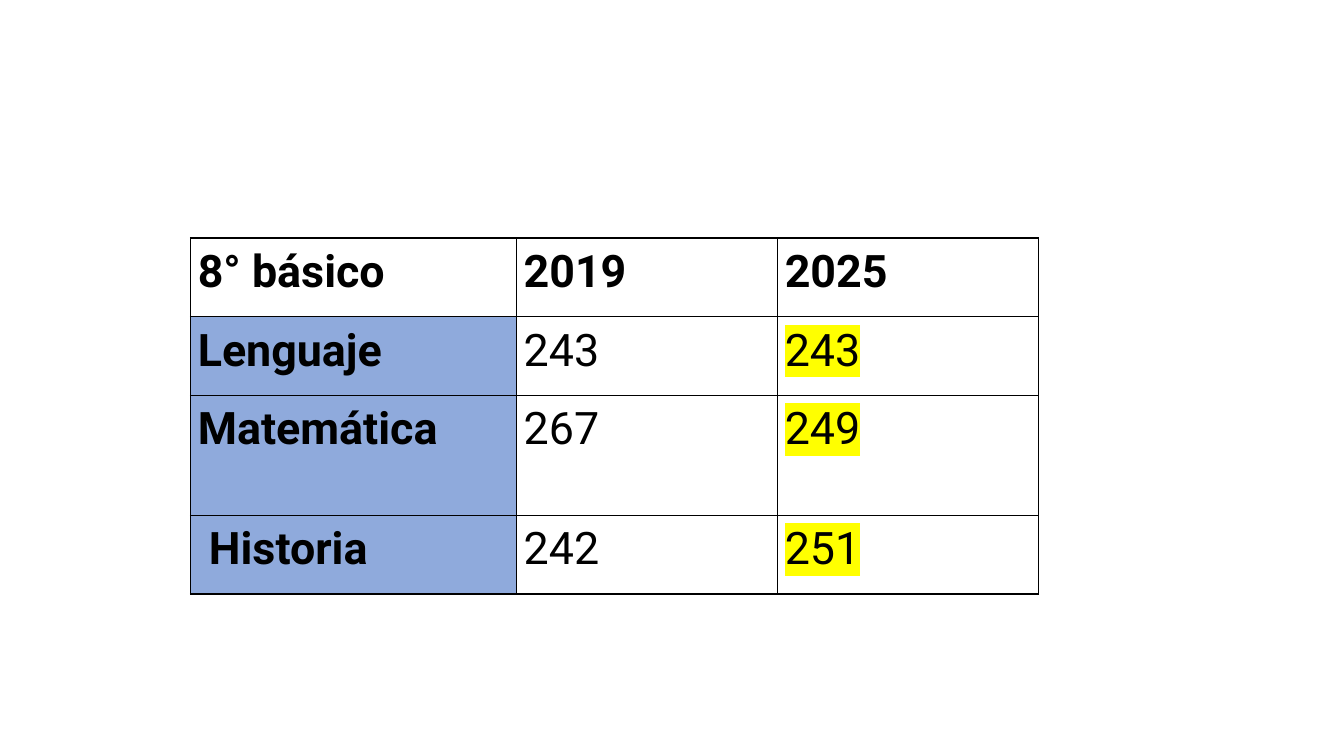
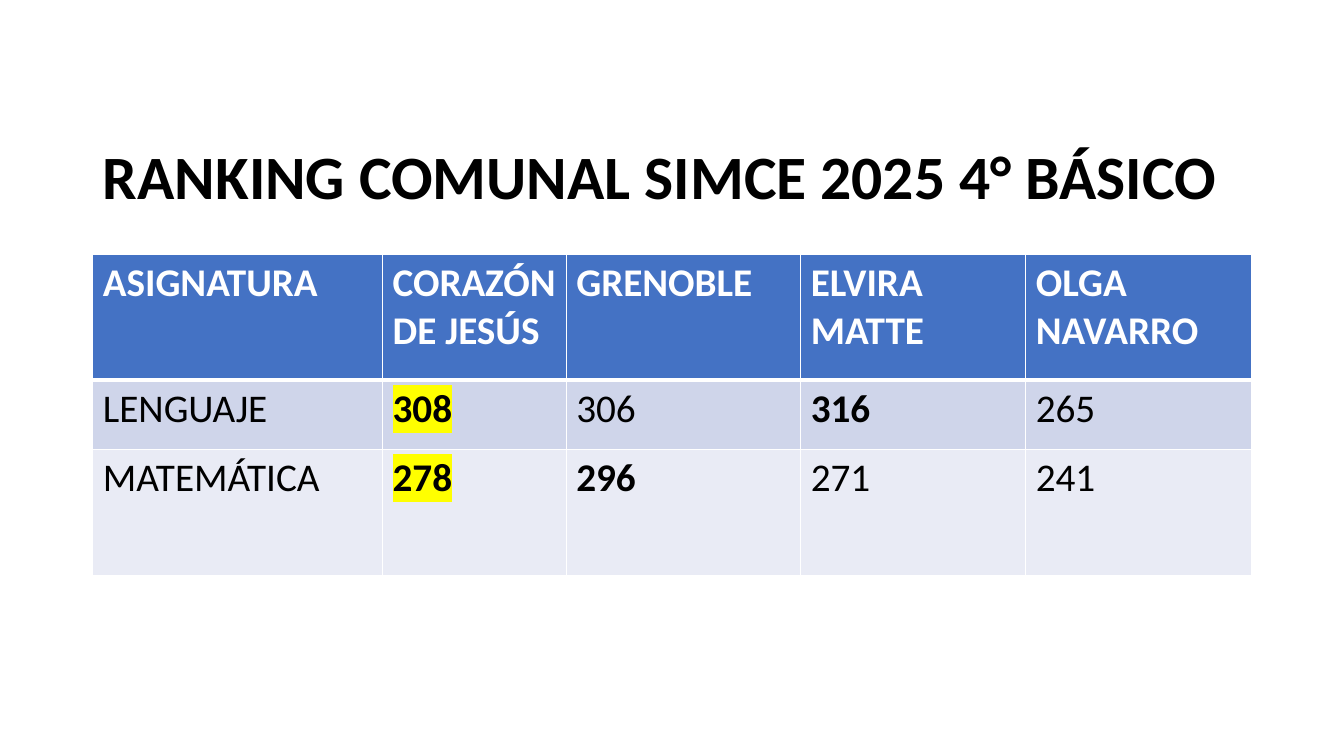
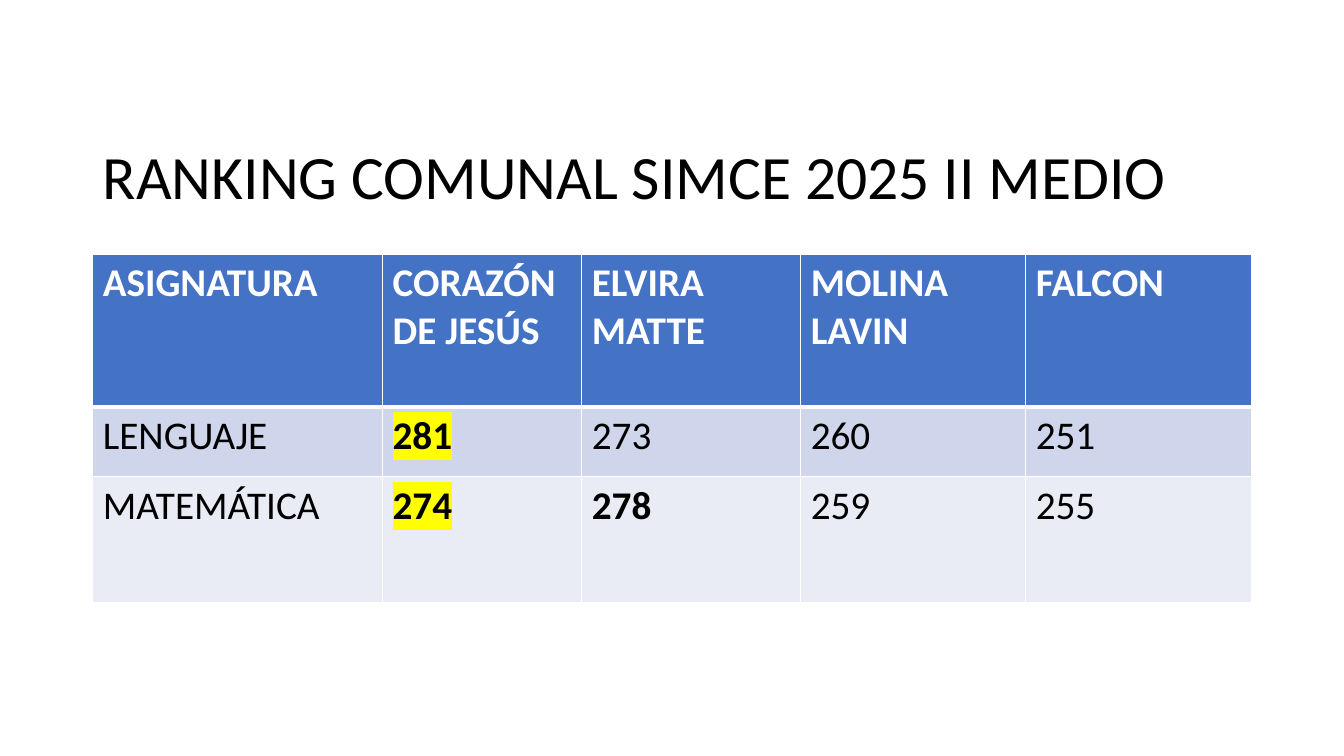
from pptx import Presentation
from pptx.dml.color import RGBColor
from pptx.enum.text import MSO_ANCHOR, MSO_AUTO_SIZE, PP_ALIGN
from pptx.oxml.ns import qn
from pptx.util import Pt
from lxml.etree import SubElement, Element

BLACK, WHITE, YELLOW = "000000", "FFFFFF", "FFFF00"
SUBJECT_BLUE, HEADER_BLUE = "8FAADC", "4472C4"
BANDS = ["CFD5EA", "E9EBF5"]

TITLE_BOX = (66.3, 76.3, 828, 104.4)
RANKING_ORIGIN = (66.3, 181.4)
YEARS_ORIGIN = (136, 170)

TITLE_FONT = {"name": "Calibri", "size": Pt(44)}
RANKING_FONT = {"name": "Calibri", "size": Pt(28)}
YEARS_FONT = {"name": "Roboto", "size": Pt(32)}
YEARS_PARAGRAPH = {"line_spacing": 1.15, "space_after": Pt(8)}
YEARS_MARGINS = {"margin_left": Pt(5.3), "margin_right": Pt(5.3),
                 "margin_top": Pt(0), "margin_bottom": Pt(0)}


def rgb(color):
    return RGBColor.from_string(color)


def apply(target, values):
    for name, value in values.items():
        setattr(target, name, value)


def add_run(p, text, font, color, bold):
    r = p.add_run()
    r.text = text
    r.font.color.rgb = rgb(color)
    apply(r.font, {**font, "bold": bold})
    return r


def highlight(r):
    mark = Element(qn("a:highlight"))
    SubElement(mark, qn("a:srgbClr"), val=YELLOW)
    r.font.fill  # the colour element precedes the highlight
    r._r.rPr.find(qn("a:solidFill")).addnext(mark)


def set_borders(cell, color, widths):
    """Widths are given for the left, right, top and bottom side."""
    tcPr = cell._tc.get_or_add_tcPr()
    for side, width in zip("LRTB", widths):
        ln = SubElement(tcPr, qn(f"a:ln{side}"), w=str(Pt(width)))
        fill = SubElement(ln, qn("a:solidFill"))
        SubElement(fill, qn("a:srgbClr"), val=color)


def add_grid(s, origin, widths, heights):
    """Add an unstyled table with the given column widths and row heights."""
    x, y = origin
    table = s.shapes.add_table(len(heights), len(widths), Pt(x), Pt(y),
                               Pt(sum(widths)), Pt(sum(heights))).table
    apply(table, {"first_row": False, "horz_banding": False})
    for column, width in zip(table.columns, widths):
        column.width = Pt(width)
    for row, height in zip(table.rows, heights):
        row.height = Pt(height)
    return table


def fill_cell(cell, text, font, color, bold, marked, fill):
    cell.fill.solid()
    cell.fill.fore_color.rgb = rgb(fill)
    r = add_run(cell.text_frame.paragraphs[0], text, font, color, bold)
    if marked:
        highlight(r)


def years_table(s, origin, rows):
    """Scores by year, with the latest year highlighted."""
    table = add_grid(s, origin, [232.8, 186.5, 186.5], [56.2, 56.2, 85.7, 56.2])
    for i, row in enumerate(rows):
        for j, text in enumerate(row):
            cell = table.cell(i, j)
            set_borders(cell, BLACK, (1, 1, 1, 1))
            apply(cell, YEARS_MARGINS)
            apply(cell.text_frame.paragraphs[0], YEARS_PARAGRAPH)
            fill_cell(cell, text, YEARS_FONT, BLACK, i == 0 or j == 0,
                      i > 0 and j == 2, SUBJECT_BLUE if i and j == 0 else WHITE)


def ranking_table(s, origin, widths, heights, rows):
    """Scores by school: own school highlighted, best score in bold."""
    table = add_grid(s, origin, widths, heights)
    for i, row in enumerate(rows):
        best = max(row[1:])
        for j, text in enumerate(row):
            cell = table.cell(i, j)
            set_borders(cell, WHITE, (1, 1, 3 if i == 1 else 1, 3 if i == 0 else 1))
            if i == 0:
                fill_cell(cell, text, RANKING_FONT, WHITE, True, False, HEADER_BLUE)
            else:
                fill_cell(cell, text, RANKING_FONT, BLACK, j == 1 or text == best,
                          j == 1, BANDS[i - 1])


def set_title(s, box, text, bold):
    title = s.shapes.title
    apply(title, dict(zip(("left", "top", "width", "height"), map(Pt, box))))
    tf = title.text_frame
    apply(tf, {"word_wrap": True, "auto_size": MSO_AUTO_SIZE.NONE,
               "vertical_anchor": MSO_ANCHOR.MIDDLE})
    p = tf.paragraphs[0]
    apply(p, {"alignment": PP_ALIGN.LEFT, "line_spacing": 0.9})
    add_run(p, text, TITLE_FONT, BLACK, bold)


def ranking_slide(prs, title, bold, widths, header_height, rows):
    s = prs.slides.add_slide(prs.slide_layouts[5])
    set_title(s, TITLE_BOX, title, bold)
    ranking_table(s, RANKING_ORIGIN, widths, [header_height, 49.7, 90], rows)


def main():
    prs = Presentation()
    prs.slide_width, prs.slide_height = Pt(960), Pt(540)

    # Scores by year
    s = prs.slides.add_slide(prs.slide_layouts[6])
    years_table(s, YEARS_ORIGIN, [
        ["8° básico", "2019", "2025"],
        ["Lenguaje", "243", "243"],
        ["Matemática", "267", "249"],
        [" Historia", "242", "251"],
    ])

    # Local rankings
    ranking_slide(prs, "RANKING COMUNAL SIMCE 2025 4° BÁSICO", True,
                  [207, 131.2, 167.5, 160.7, 161], 90, [
        ["ASIGNATURA", "CORAZÓN DE JESÚS", "GRENOBLE", "ELVIRA MATTE", "OLGA NAVARRO"],
        ["LENGUAJE", "308", "306", "316", "265"],
        ["MATEMÁTICA", "278", "296", "271", "241"],
    ])
    ranking_slide(prs, "RANKING COMUNAL SIMCE 2025 II MEDIO", False,
                  [207, 142.3, 156.4, 160.7, 161], 109.4, [
        ["ASIGNATURA", "CORAZÓN DE JESÚS", "ELVIRA MATTE", "MOLINA LAVIN", "FALCON"],
        ["LENGUAJE", "281", "273", "260", "251"],
        ["MATEMÁTICA", "274", "278", "259", "255"],
    ])
    prs.save("out.pptx")


if __name__ == "__main__":
    main()
